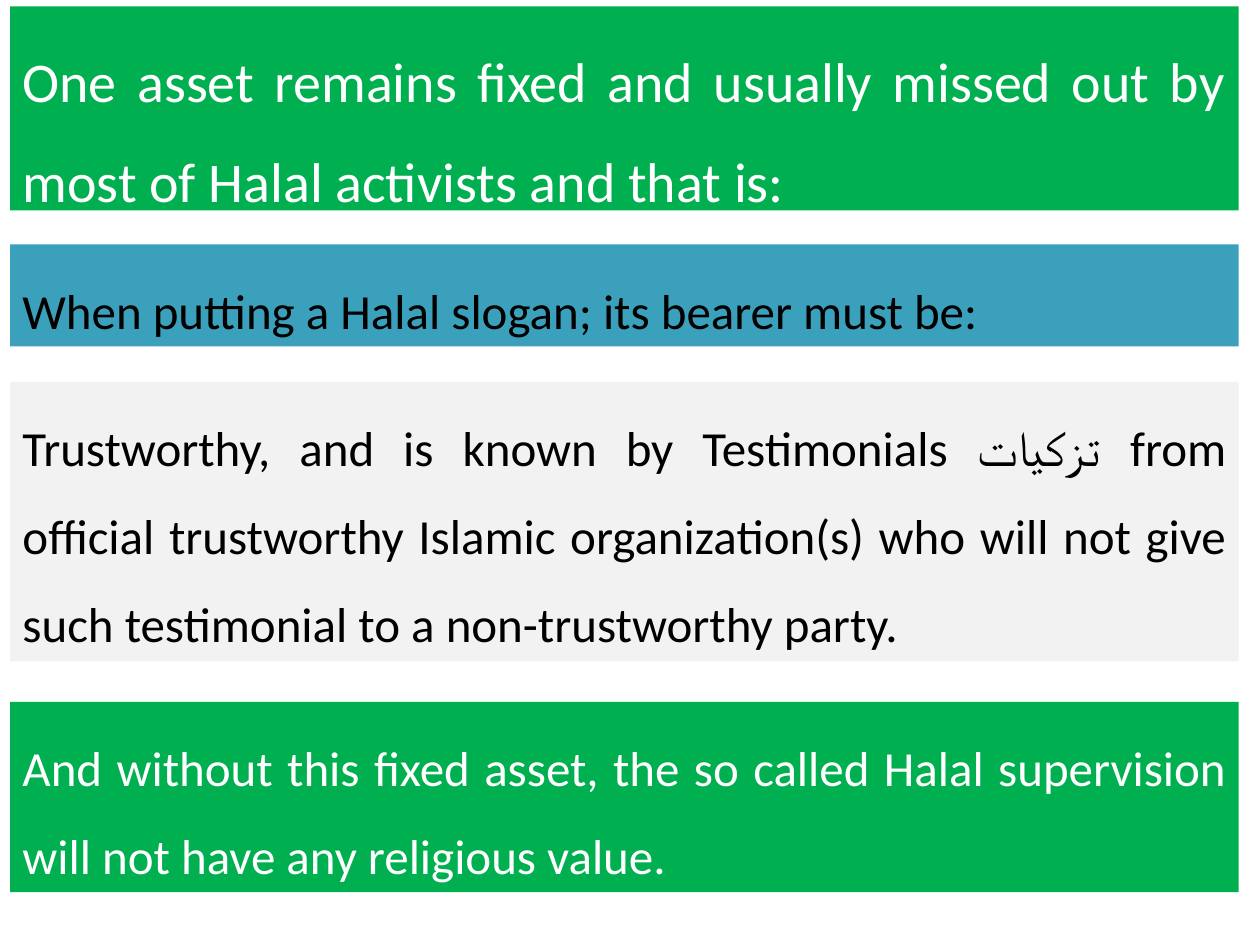
from pptx import Presentation
from pptx.dml.color import RGBColor
from pptx.enum.text import MSO_AUTO_SIZE, PP_ALIGN
from pptx.util import Inches, Pt

COLORS = {
    "green": "00B050",
    "blue": "3BA0BB",
    "gray": "F2F2F2",
    "white": "FFFFFF",
    "black": "000000",
}

deck = Presentation()
deck.slide_width = Inches(10)
deck.slide_height = Inches(7.5)
slide = deck.slides.add_slide(deck.slide_layouts[6])


def add_band(text, top, height, fill, color, size=28, align=PP_ALIGN.JUSTIFY, before=0):
    band = slide.shapes.add_textbox(Inches(0.08), Inches(top), Inches(9.75), Inches(height))
    band.fill.solid()
    band.fill.fore_color.rgb = RGBColor.from_string(COLORS[fill])
    frame = band.text_frame
    frame.word_wrap = True
    frame.auto_size = MSO_AUTO_SIZE.SHAPE_TO_FIT_TEXT
    para = frame.paragraphs[0]
    para.alignment = align
    para.line_spacing = 1.5
    para.space_before = Pt(before)
    run = para.add_run()
    run.text = text
    run.font.name = "Calibri"
    run.font.size = Pt(size)
    run.font.color.rgb = RGBColor.from_string(COLORS[color])


add_band("One asset remains fixed and usually missed out by most of Halal activists and that is:",
         top=0.05, height=1.62, fill="green", color="white", size=32)
add_band("When putting a Halal slogan; its bearer must be:",
         top=1.94, height=0.81, fill="blue", color="black", align=PP_ALIGN.LEFT, before=6)
add_band("Trustworthy, and is known by Testimonials تزكيات from official trustworthy Islamic "
         "organization(s) who will not give such testimonial to a non-trustworthy party.",
         top=3.03, height=2.22, fill="gray", color="black")
add_band("And without this fixed asset, the so called Halal supervision will not have any religious value.",
         top=5.57, height=1.51, fill="green", color="white")

deck.save("out.pptx")
